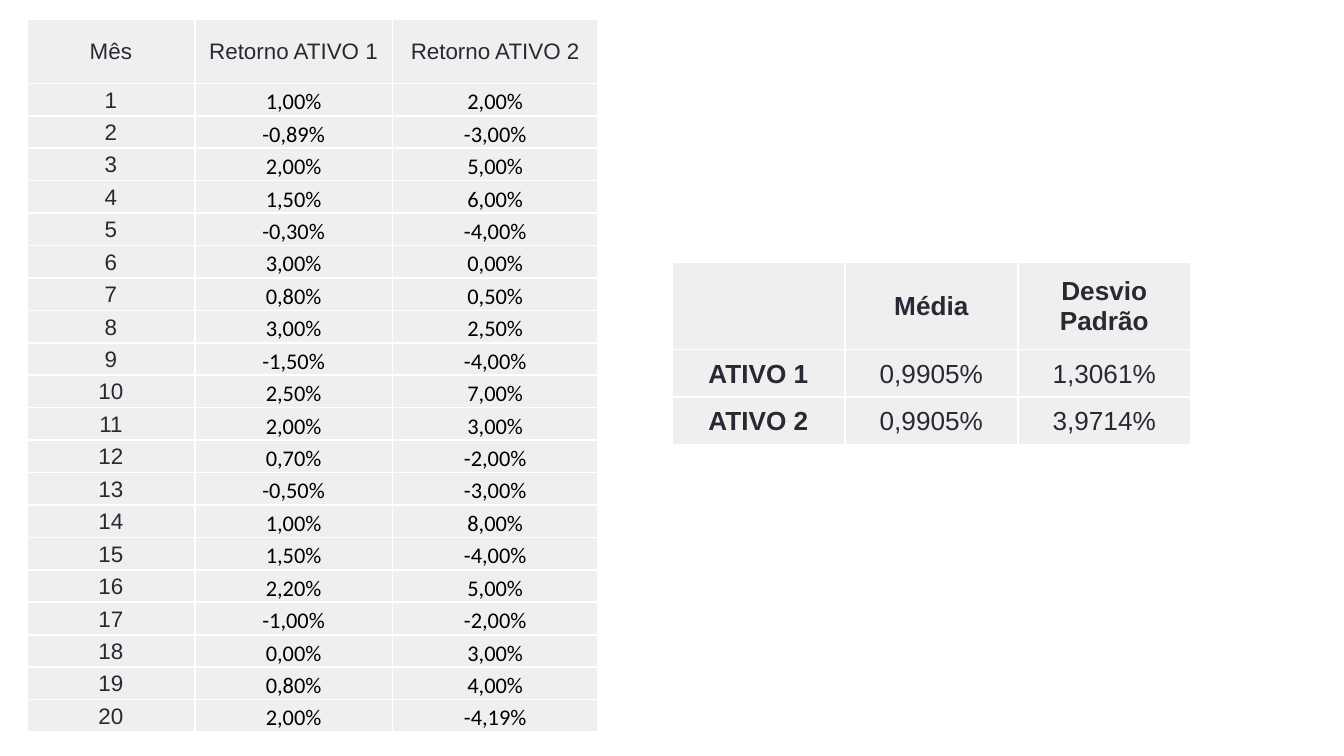
import pptx
import pptx.dml.color
import pptx.enum.text
import pptx.oxml.ns
import pptx.util
from lxml import etree

Inches = pptx.util.Inches
ANCHOR = pptx.enum.text.MSO_ANCHOR

INK, BLACK, PANEL, WHITE = "292934", "000000", "EEF0EF", "FFFFFF"

ASSET_1 = ("1,00% -0,89% 2,00% 1,50% -0,30% 3,00% 0,80% 3,00% -1,50% 2,50% "
           "2,00% 0,70% -0,50% 1,00% 1,50% 2,20% -1,00% 0,00% 0,80% 2,00%").split()
ASSET_2 = ("2,00% -3,00% 5,00% 6,00% -4,00% 0,00% 0,50% 2,50% -4,00% 7,00% "
           "3,00% -2,00% -3,00% 8,00% -4,00% 5,00% -2,00% 3,00% 4,00% -4,19%").split()
SUMMARY = [
    ("", "Média", "Desvio Padrão"),
    ("ATIVO 1", "0,9905%", "1,3061%"),
    ("ATIVO 2", "0,9905%", "3,9714%"),
]


def color(hex_text):
    return pptx.dml.color.RGBColor.from_string(hex_text)


def write(cell, text, size=12, font="Arial", ink=INK, bold=False, anchor=ANCHOR.MIDDLE):
    cell.vertical_anchor = anchor
    para = cell.text_frame.paragraphs[0]
    para.alignment = pptx.enum.text.PP_ALIGN.CENTER
    if text:
        span = para.add_run()
        span.text = text
        span.font.size = pptx.util.Pt(size)
        span.font.name = font
        span.font.bold = bold
        span.font.color.rgb = color(ink)


def style_cell(cell):
    """Set thin margins, white borders and the panel fill."""
    cell.margin_left = cell.margin_right = cell.margin_top = Inches(0.01)
    cell.margin_bottom = 0
    properties = cell._tc.get_or_add_tcPr()
    for side in ("a:lnL", "a:lnR", "a:lnT", "a:lnB"):
        line = etree.SubElement(properties, pptx.oxml.ns.qn(side), w=str(pptx.util.Pt(1)))
        fill = etree.SubElement(line, pptx.oxml.ns.qn("a:solidFill"))
        etree.SubElement(fill, pptx.oxml.ns.qn("a:srgbClr"), val=WHITE)
    cell.fill.solid()
    cell.fill.fore_color.rgb = color(PANEL)


def add_grid(page, box, widths, header_height, row_count):
    """Add a plain table whose body rows share the height below the header."""
    left, top, width, height = box
    grid = page.shapes.add_table(row_count, len(widths), Inches(left), Inches(top),
                                 Inches(width), Inches(height)).table
    grid.first_row = grid.horz_banding = False
    for column, column_width in zip(grid.columns, widths):
        column.width = Inches(column_width)
    body_height = (height - header_height) / (row_count - 1)
    for index, row in enumerate(grid.rows):
        row.height = Inches(body_height if index else header_height)
    for cell in grid.iter_cells():
        style_cell(cell)
    return grid


def add_returns(page, box):
    grid = add_grid(page, box, (1.25, 1.47, 1.53), 0.48, len(ASSET_1) + 1)
    # Header
    for index, title in enumerate(("Mês", "Retorno ATIVO 1", "Retorno ATIVO 2")):
        write(grid.cell(0, index), title)
    # One row per month
    for month, returns in enumerate(zip(ASSET_1, ASSET_2), start=1):
        write(grid.cell(month, 0), str(month))
        for index, value in enumerate(returns, start=1):
            write(grid.cell(month, index), value, font="Calibri", ink=BLACK,
                  anchor=ANCHOR.BOTTOM)


def add_summary(page, box):
    columns = len(SUMMARY[0])
    grid = add_grid(page, box, [box[2] / columns] * columns, 0.65, len(SUMMARY))
    # Headings in the first row and column are bold
    for row, values in enumerate(SUMMARY):
        for index, value in enumerate(values):
            write(grid.cell(row, index), value, size=14, bold=row == 0 or index == 0)


def main():
    deck = pptx.Presentation()
    # Widescreen, 16:9
    deck.slide_width = Inches(10)
    deck.slide_height = deck.slide_width * 9 // 16
    page = deck.slides.add_slide(deck.slide_layouts[6])
    add_returns(page, (0.2, 0.14, 4.25, 5.31))
    add_summary(page, (5, 1.95, 3.86, 1.36))
    deck.save("out.pptx")


if __name__ == "__main__":
    main()
